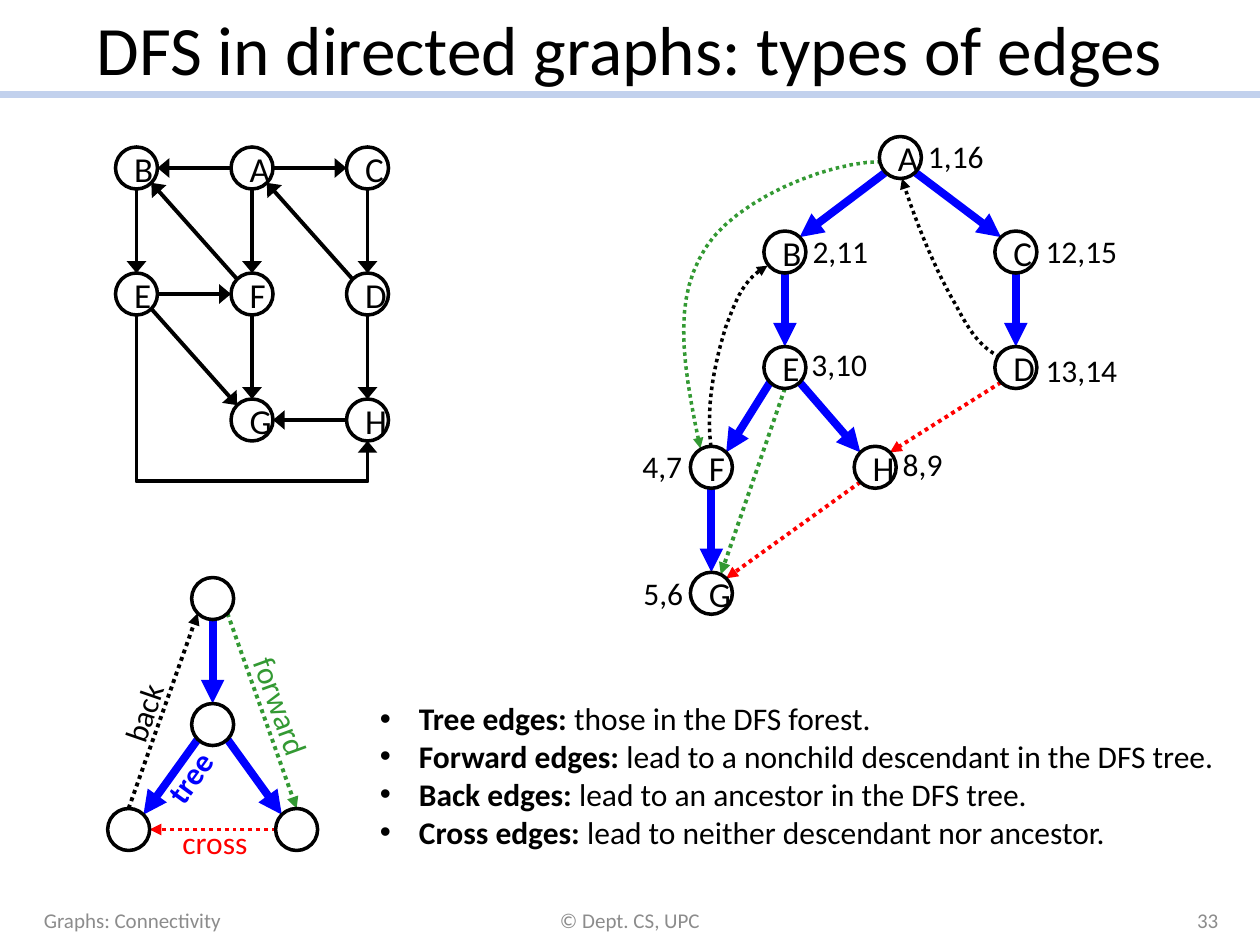
from math import hypot, sqrt

from lxml.etree import SubElement
from pptx import Presentation
from pptx.dml.color import RGBColor
from pptx.enum.dml import MSO_LINE as Dash
from pptx.enum.shapes import MSO_CONNECTOR as Link, MSO_SHAPE as Preset
from pptx.enum.text import MSO_ANCHOR as Anchor, MSO_AUTO_SIZE as Fit, PP_ALIGN as Align
from pptx.oxml.ns import qn
from pptx.util import Inches, Pt

CELLS = 12
COLS, ROWS = 120, 90
RADIUS = 2
BLACK, BLUE, GREEN, RED, GREY = "000000", "0000FF", "339933", "FF0000", "8C8C8C"
color = RGBColor.from_string

deck = Presentation()
deck.slide_width, deck.slide_height = Inches(COLS / CELLS), Inches(ROWS / CELLS)
slide = deck.slides.add_slide(deck.slide_layouts[6])
shapes = slide.shapes


def stroke(outline, hex_color, width, dotted=False, arrow=True):
    outline.line.color.rgb = color(hex_color)
    outline.line.width = Pt(width)
    if dotted:
        outline.line.dash_style = Dash.ROUND_DOT
    properties = outline._element.spPr
    if arrow:
        spread = "lg" if hex_color == BLACK and not dotted else "med"
        SubElement(properties.find(qn("a:ln")), qn("a:tailEnd"), type="triangle", w=spread)
    if properties.find(qn("a:effectLst")) is None:
        SubElement(properties, qn("a:effectLst"))


def write(paragraph, text, size, hex_color=BLACK, bold=False):
    run = paragraph.add_run()
    run.text = text
    run.font.name = "Calibri"
    run.font.size = Pt(size)
    run.font.bold = bold
    run.font.color.rgb = color(hex_color)


rule = shapes.add_connector(Link.STRAIGHT, 0, Inches(9 / CELLS), deck.slide_width, Inches(9 / CELLS))
stroke(rule, "C2D1ED", 4, arrow=False)

for text, cell, align, size, hex_color in [
    ("DFS in directed graphs: types of edges", (6, 0, 108, 9), Align.CENTER, 39.6, BLACK),
    ("Graphs: Connectivity", (3, 85.2, 28, 4.8), Align.LEFT, 12, GREY),
    ("© Dept. CS, UPC", (41, 85.2, 38, 4.8), Align.CENTER, 12, GREY),
    ("33", (89.2, 85.2, 28, 4.8), Align.RIGHT, 12, GREY),
]:
    frame = shapes.add_textbox(*[Inches(v / CELLS) for v in cell]).text_frame
    frame.word_wrap = True
    frame.vertical_anchor = Anchor.MIDDLE
    frame.paragraphs[0].alignment = align
    write(frame.paragraphs[0], text, size, hex_color)

digraph = {
    name: (13 + 11 * col, 16 + 12 * row)
    for row, names in enumerate(["BAC", "EFD", " GH"])
    for col, name in enumerate(names)
    if name != " "
}
forest = {
    "B": (74.75, 24), "A": (85.75, 15), "C": (96.75, 24), "D": (96.75, 35),
    "E": (74.75, 35), "H": (83.35, 44.5), "F": (67.75, 44.5), "G": (67.75, 56.5),
}
legend = {"top": (20.25, 57), "middle": (20.25, 69), "left": (12.25, 79), "right": (28.25, 79)}

edges = []
for nodes, pairs, hex_color, width, dotted in [
    (digraph, "A-B A-C C-D D-A A-F F-B E-F B-E E-G F-G D-H H-G", BLACK, 2.25, False),
    (forest, "A-B A-C C-D E-F B-E F-G E-H", BLUE, 4.5, False),
    (forest, "D-H H-G", RED, 2.25, True),
    (legend, "top-middle middle-left middle-right", BLUE, 4.5, False),
    (legend, "right-left", RED, 2.25, True),
]:
    for pair in pairs.split():
        (x1, y1), (x2, y2) = [nodes[name] for name in pair.split("-")]
        side_x, side_y = (x2 > x1) - (x2 < x1), (y2 > y1) - (y2 < y1)
        reach = RADIUS / hypot(side_x, side_y)
        dx, dy = side_x * reach, side_y * reach
        edges.append(((x1 + dx, y1 + dy, x2 - dx, y2 - dy), hex_color, width, dotted))

corner = RADIUS / sqrt(2)
top_x, top_y = legend["top"]
edges += [
    ((74.75, 37, 68.65, 54.7), GREEN, 2.25, True),
    ((top_x + corner, top_y + corner, 28.25, 77), GREEN, 2.25, True),
    ((12.25, 77, top_x - corner, top_y + corner), BLACK, 2.25, True),
]
for ends, hex_color, width, dotted in edges:
    edge = shapes.add_connector(Link.STRAIGHT, *[Inches(v / CELLS) for v in ends])
    stroke(edge, hex_color, width, dotted)

detour = shapes.add_connector(Link.ELBOW, *[Inches(v / CELLS) for v in (30, 25, 18, 47)])
detour._element.spPr.find(qn("a:xfrm")).set("rot", str(270 * 60000))
bends = detour._element.spPr.find(qn("a:prstGeom")).find(qn("a:avLst"))
SubElement(bends, qn("a:gd"), name="adj1", fmla="val 131900")
stroke(detour, BLACK, 2.25)

for hex_color, start, curves in [
    (BLACK, (67.7, 42.5), [[(67.2, 38.2), (68.2, 34.2), (69.1, 31.2)],
                           [(70.2, 28.3), (70.8, 26.6), (73.1, 25.3)]]),
    (BLACK, (95.2, 34), [[(93.5, 33.1), (92.5, 31.9), (91, 29)],
                         [(89.4, 26.3), (87.4, 21.8), (85.9, 17)]]),
    (GREEN, (83.9, 15.4), [[(78.7, 15.4), (70, 19.1), (67.2, 23.6)],
                           [(64.3, 28.2), (64.7, 33.4), (66.7, 42.7)]]),
]:
    outline = [start]
    for controls in curves:
        bezier = [outline[-1], *controls]
        for step in range(1, 13):
            t = step / 12
            weights = ((1 - t) ** 3, 3 * t * (1 - t) ** 2, 3 * t * t * (1 - t), t ** 3)
            outline.append(tuple(sum(w * p[axis] for w, p in zip(weights, bezier)) for axis in (0, 1)))
    points = [(Inches(x / CELLS), Inches(y / CELLS)) for x, y in outline]
    builder = shapes.build_freeform(*points[0])
    builder.add_line_segments(points[1:], close=False)
    arc = builder.convert_to_shape()
    arc.shadow.inherit = False
    arc.fill.background()
    stroke(arc, hex_color, 2, dotted=True)

for nodes in (digraph, forest, legend):
    for name, (x, y) in nodes.items():
        cell = (x - RADIUS, y - RADIUS, 2 * RADIUS, 2 * RADIUS)
        node = shapes.add_shape(Preset.OVAL, *[Inches(v / CELLS) for v in cell])
        node.shadow.inherit = False
        node.fill.solid()
        node.fill.fore_color.rgb = color("FFFFFF")
        stroke(node, BLACK, 2, arrow=False)
        if nodes is not legend:
            node.text_frame.vertical_anchor = Anchor.MIDDLE
            node.text_frame.paragraphs[0].alignment = Align.CENTER
            write(node.text_frame.paragraphs[0], name, 20)

for text, x, y, width, angle, hex_color in [
    ("1,16", 87.2, 12.5, 7.8, 0, BLACK),
    ("12,15", 98.4, 21.5, 9.4, 0, BLACK),
    ("13,14", 98.4, 32.8, 9.4, 0, BLACK),
    ("2,11", 76.2, 21.5, 7.8, 0, BLACK),
    ("3,10", 76.1, 32.3, 7.8, 0, BLACK),
    ("4,7", 60, 42, 6.2, 0, BLACK),
    ("5,6", 60.1, 54.1, 6.2, 0, BLACK),
    ("8,9", 84.8, 41.8, 6.2, 0, BLACK),
    ("tree", 14.2, 71.4, 8, 306, BLUE),
    ("forward", 20.7, 65, 12.3, 70, GREEN),
    ("back", 9.5, 65.3, 8.4, 289, BLACK),
    ("cross", 16.2, 77.8, 8.6, 0, RED),
]:
    label = shapes.add_textbox(*[Inches(v / CELLS) for v in (x, y, width, 4.8)])
    label.rotation = angle
    label.text_frame.word_wrap = False
    label.text_frame.auto_size = Fit.NONE if angle else Fit.SHAPE_TO_FIT_TEXT
    write(label.text_frame.paragraphs[0], text, 18, hex_color, bold=text == "tree")

definitions = shapes.add_textbox(*[Inches(v / CELLS) for v in (35, 66, 82, 15.7)]).text_frame
definitions.word_wrap = False
definitions.auto_size = Fit.SHAPE_TO_FIT_TEXT
for index, (term, meaning) in enumerate([
    ("Tree edges:", " those in the DFS forest."),
    ("Forward edges:", " lead to a nonchild descendant in the DFS tree."),
    ("Back edges:", " lead to an ancestor in the DFS tree."),
    ("Cross edges:", " lead to neither descendant nor ancestor."),
]):
    item = definitions.add_paragraph() if index else definitions.paragraphs[0]
    layout = item._p.get_or_add_pPr()
    layout.set("marL", str(Inches(0.31)))
    layout.set("indent", str(-Inches(0.31)))
    SubElement(layout, qn("a:buFont"), typeface="Arial")
    SubElement(layout, qn("a:buChar"), char="•")
    write(item, term, 18, bold=True)
    write(item, meaning, 18)

deck.save("out.pptx")
